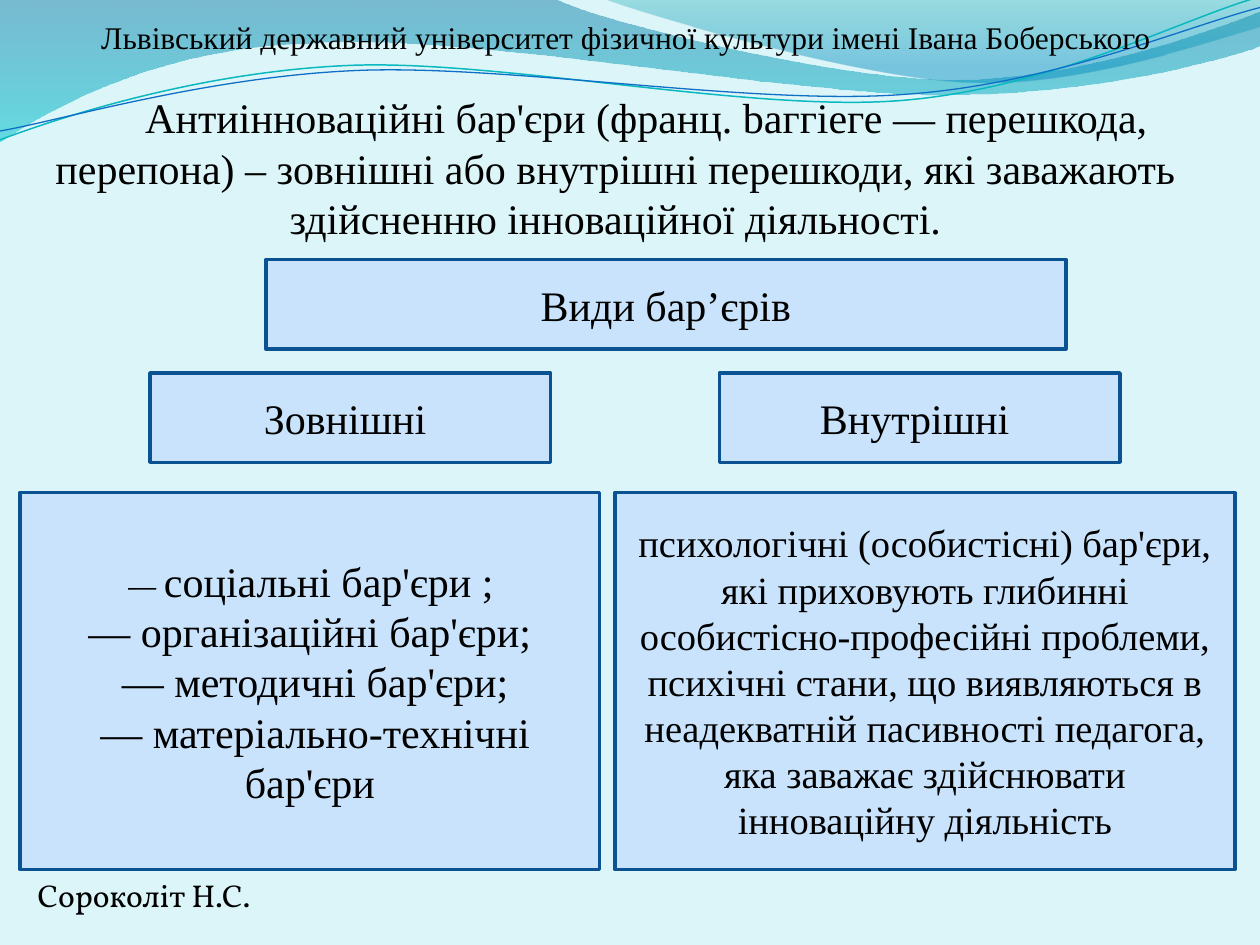
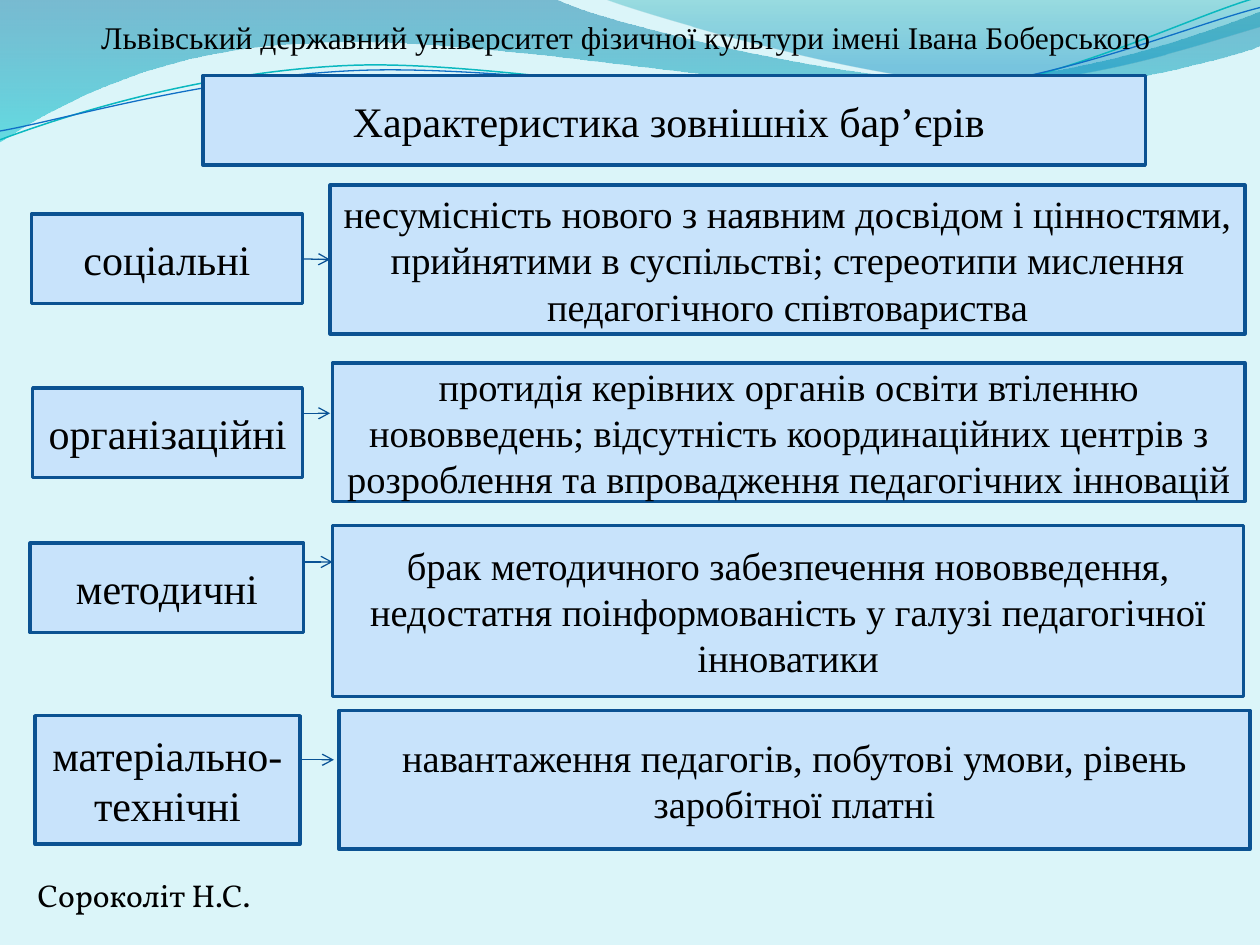
import lxml.etree
import pptx
import pptx.dml.color
import pptx.enum.shapes
import pptx.enum.text
import pptx.oxml
import pptx.oxml.ns
import pptx.util

Inches = pptx.util.Inches
Pt = pptx.util.Pt
RGBColor = pptx.dml.color.RGBColor
ALIGN = pptx.enum.text.PP_ALIGN
ANCHOR = pptx.enum.text.MSO_ANCHOR
AUTO_SIZE = pptx.enum.text.MSO_AUTO_SIZE
qn = pptx.oxml.ns.qn

PALE_AQUA = RGBColor(0xDB, 0xF5, 0xF9)
BOX_BLUE = RGBColor(0xC8, 0xE3, 0xFB)
BORDER_BLUE = RGBColor(0x0B, 0x52, 0x92)
ARROW_BLUE = RGBColor(0x09, 0x52, 0x95)
INK = RGBColor(0, 0, 0)
DEEP_BLUE = RGBColor(0x00, 0x74, 0xA1)
CYAN = RGBColor(0x00, 0xC6, 0xCF)
TEAL = RGBColor(0x00, 0xA1, 0xA9)
SKY_BLUE = RGBColor(0x00, 0x8B, 0xBF)
TEAL_LINE = RGBColor(0x0A, 0xB8, 0xBF)
BLUE_LINE = RGBColor(0x0F, 0x6F, 0xC6)

SERIF = "Times New Roman"
AUTHOR_FONT = "Vollkorn"
UNIVERSITY = "Львівський державний університет фізичної культури імені Івана Боберського"
AUTHOR = "Сороколіт Н.С."


def write(frame, lines, size, font=SERIF, align=ALIGN.CENTER):
    """Fill a text frame; a line is a string or a list of (text, size, font) runs."""
    for number, line in enumerate(lines):
        paragraph = frame.add_paragraph() if number else frame.paragraphs[0]
        paragraph.alignment = align
        for text, points, face in [(line, size, font)] if isinstance(line, str) else line:
            run = paragraph.add_run()
            run.text = text
            for key, value in {"size": Pt(points), "name": face, "bold": False}.items():
                setattr(run.font, key, value)
            run.font.color.rgb = INK


def add_box(slide, place, lines, size=24):
    box = slide.shapes.add_shape(pptx.enum.shapes.MSO_SHAPE.RECTANGLE, *map(Inches, place))
    box.shadow.inherit = False
    box.fill.solid()
    box.fill.fore_color.rgb = BOX_BLUE
    box.line.color.rgb = BORDER_BLUE
    box.line.width = Pt(2)
    box.text_frame.word_wrap = True
    box.text_frame.vertical_anchor = ANCHOR.MIDDLE
    write(box.text_frame, lines, size)
    return box


deck = pptx.Presentation()
deck.slide_width, deck.slide_height = Inches(10), Inches(7.5)
layout = deck.slide_layouts[5]
layout.background.fill.solid()
layout.background.fill.fore_color.rgb = PALE_AQUA
for unused in list(layout.placeholders)[1:]:
    layout.shapes.element.remove(unused.element)

kinds_slide = deck.slides.add_slide(layout)
external_slide = deck.slides.add_slide(layout)

# Waves: start, segments (2 numbers for a line, 6 for a Bezier curve),
# gradient stops (position, colour, opacity %) or line (colour, width)
waves = [
    ((0, 0), [(4.4, -0.01),
              (4.76, 0.17, 6.64, 0.63, 7.58, 0.63),
              (8.53, 0.63, 9.58, 0.26, 10, 0.09),
              (10.01, 0.36),
              (9.83, 0.44, 8.7, 0.76, 7.46, 0.75),
              (6.22, 0.75, 3.82, 0.28, 2.57, 0.34),
              (1.29, 0.36, 0.46, 0.83, -0.01, 1.13)],
     [(0, DEEP_BLUE, 45), (1, CYAN, 55)], None),
    ((4.79, -0.01), [(5.09, 0.11, 6.82, 0.62, 7.69, 0.65),
                     (8.56, 0.69, 9.61, 0.32, 10, 0.21),
                     (10, 0)],
     [(0, TEAL, 30), (0.8, SKY_BLUE, 45)], None),
    ((0, 1.11), [(0.48, 0.93, 1.58, 0.57, 2.77, 0.52),
                 (3.95, 0.47, 5.93, 0.89, 7.13, 0.8),
                 (8.33, 0.71, 9.38, 0.15, 9.98, -0.02)],
     None, (TEAL_LINE, 0.85)),
    ((0, 1.04), [(0.47, 0.96, 1.64, 0.61, 2.83, 0.56),
                 (4.03, 0.51, 5.97, 0.84, 7.17, 0.75),
                 (8.36, 0.67, 9.41, 0.21, 10, 0.06)],
     None, (BLUE_LINE, 0.75)),
]
for start, segments, stops, stroke in waves:
    builder = kinds_slide.shapes.build_freeform(*map(Inches, start))
    builder.add_line_segments([tuple(map(Inches, segment[-2:])) for segment in segments],
                              close=stroke is None)
    wave = builder.convert_to_shape()
    wave.shadow.inherit = False
    # Bend the straight pieces into their curves
    for piece, segment in zip(list(wave.element.iter(qn("a:lnTo"))), segments):
        if len(segment) == 6:
            curve = lxml.etree.Element(qn("a:cubicBezTo"))
            for x, y in zip(segment[::2], segment[1::2]):
                lxml.etree.SubElement(curve, qn("a:pt"), x=str(Inches(x) - wave.left),
                                      y=str(Inches(y) - wave.top))
            piece.getparent().replace(piece, curve)
    if stroke:
        wave.fill.background()
        wave.line.color.rgb, wave.line.width = stroke[0], Pt(stroke[1])
    else:
        wave.line.fill.background()
        wave.fill.gradient()
        wave.fill.gradient_angle = 270
        for stop, (position, colour, _) in zip(wave.fill.gradient_stops, stops):
            stop.position = position
            stop.color.rgb = colour
        for tint, (_, _, opacity) in zip(wave.element.spPr.iter(qn("a:srgbClr")), stops):
            lxml.etree.SubElement(tint, qn("a:alpha"), val=str(opacity * 1000))
    # The layout carries the wave, so every slide shows it
    layout.shapes.element.append(wave.element)

for slide in deck.slides:
    heading = slide.shapes.title
    for key, value in {"left": 0.43, "top": 0.13, "width": 9.08, "height": 0.31}.items():
        setattr(heading, key, Inches(value))
    for key, value in {"margin_left": 0, "margin_right": 0, "margin_bottom": 0,
                       "margin_top": Inches(0.05), "word_wrap": True,
                       "auto_size": AUTO_SIZE.NONE,
                       "vertical_anchor": ANCHOR.BOTTOM}.items():
        setattr(heading.text_frame, key, value)
    write(heading.text_frame, [UNIVERSITY], 18)

    author = slide.shapes.add_textbox(Inches(0.2), Inches(6.9), Inches(1.92), Inches(0.4))
    author.text_frame.word_wrap = False
    author.text_frame.auto_size = AUTO_SIZE.SHAPE_TO_FIT_TEXT
    write(author.text_frame, [AUTHOR], 18, AUTHOR_FONT, ALIGN.LEFT)

# Slide 1: kinds of barriers
definition = kinds_slide.shapes.add_textbox(Inches(0.2), Inches(0.68), Inches(9.37), Inches(1.31))
definition.text_frame.word_wrap = True
definition.text_frame.auto_size = AUTO_SIZE.SHAPE_TO_FIT_TEXT
write(definition.text_frame, [
    "Антиінноваційні бар'єри (франц. bаггіеге — перешкода, перепона) – зовнішні або "
    "внутрішні перешкоди, які заважають здійсненню інноваційної діяльності."], 24)
definition.text_frame.paragraphs[0]._p.get_or_add_pPr().set("indent", str(Inches(0.49)))

add_box(kinds_slide, (2.11, 2.06, 6.35, 0.71), ["Види бар’єрів"])
for left, kind in [(1.19, "Зовнішні "), (5.71, "Внутрішні ")]:
    add_box(kinds_slide, (left, 2.96, 3.18, 0.71), [kind])
add_box(kinds_slide, (0.16, 3.91, 4.6, 2.99), [
    [("— ", 18, AUTHOR_FONT), ("соціальні бар'єри ;", 24, SERIF)],
    "— організаційні бар'єри;",
    " — методичні бар'єри;",
    " — матеріально-технічні бар'єри"])
add_box(kinds_slide, (4.88, 3.91, 4.92, 2.99), [
    "психологічні (особистісні) бар'єри, які приховують глибинні "
    "особистісно-професійні проблеми, психічні стани, що виявляються в неадекватній "
    "пасивності педагога, яка заважає здійснювати інноваційну діяльність"], 22)

# Slide 2: external barriers, each with its description and arrow (start x, end x, y)
add_box(external_slide, (1.61, 0.6, 7.48, 0.71), ["Характеристика зовнішніх бар’єрів "])
barriers = [
    ("соціальні", (0.25, 1.7, 2.15, 0.71),
     "несумісність нового з наявним досвідом і цінностями, прийнятими в суспільстві; "
     "стереотипи мислення педагогічного співтовариства",
     (2.62, 1.47, 7.26, 1.18), (2.4, 2.62, 2.06)),
    ("організаційні", (0.26, 3.08, 2.14, 0.71),
     "протидія керівних органів освіти втіленню нововведень; відсутність координаційних "
     "центрів з розроблення та впровадження педагогічних інновацій",
     (2.64, 2.88, 7.24, 1.1), (2.4, 2.62, 3.28)),
    ("методичні", (0.24, 4.31, 2.17, 0.71),
     "брак методичного забезпечення нововведення, недостатня поінформованість у галузі "
     "педагогічної інноватики",
     (2.64, 4.17, 7.23, 1.36), (2.4, 2.64, 4.46)),
    ("матеріально-технічні", (0.28, 5.68, 2.1, 1.02),
     "навантаження педагогів, побутові умови, рівень заробітної платні",
     (2.69, 5.64, 7.23, 1.1), (2.39, 2.65, 6.03)),
]
for barrier, barrier_place, description, description_place, (x1, x2, y) in barriers:
    barrier_box = add_box(external_slide, barrier_place, [barrier])
    description_box = add_box(external_slide, description_place, [description], 22)
    arrow = external_slide.shapes.add_connector(
        pptx.enum.shapes.MSO_CONNECTOR.STRAIGHT, Inches(x1), Inches(y), Inches(x2), Inches(y))
    if abs(barrier_box.top + barrier_box.height / 2 - Inches(y)) < Inches(0.02):
        arrow.begin_connect(barrier_box, 3)
        arrow.end_connect(description_box, 1)
    arrow.line.color.rgb = ARROW_BLUE
    arrow.line.width = Pt(0.75)
    lxml.etree.SubElement(arrow.line._get_or_add_ln(), qn("a:tailEnd"), type="arrow")
    lxml.etree.SubElement(arrow.element.spPr, qn("a:effectLst"))

deck.save("out.pptx")
